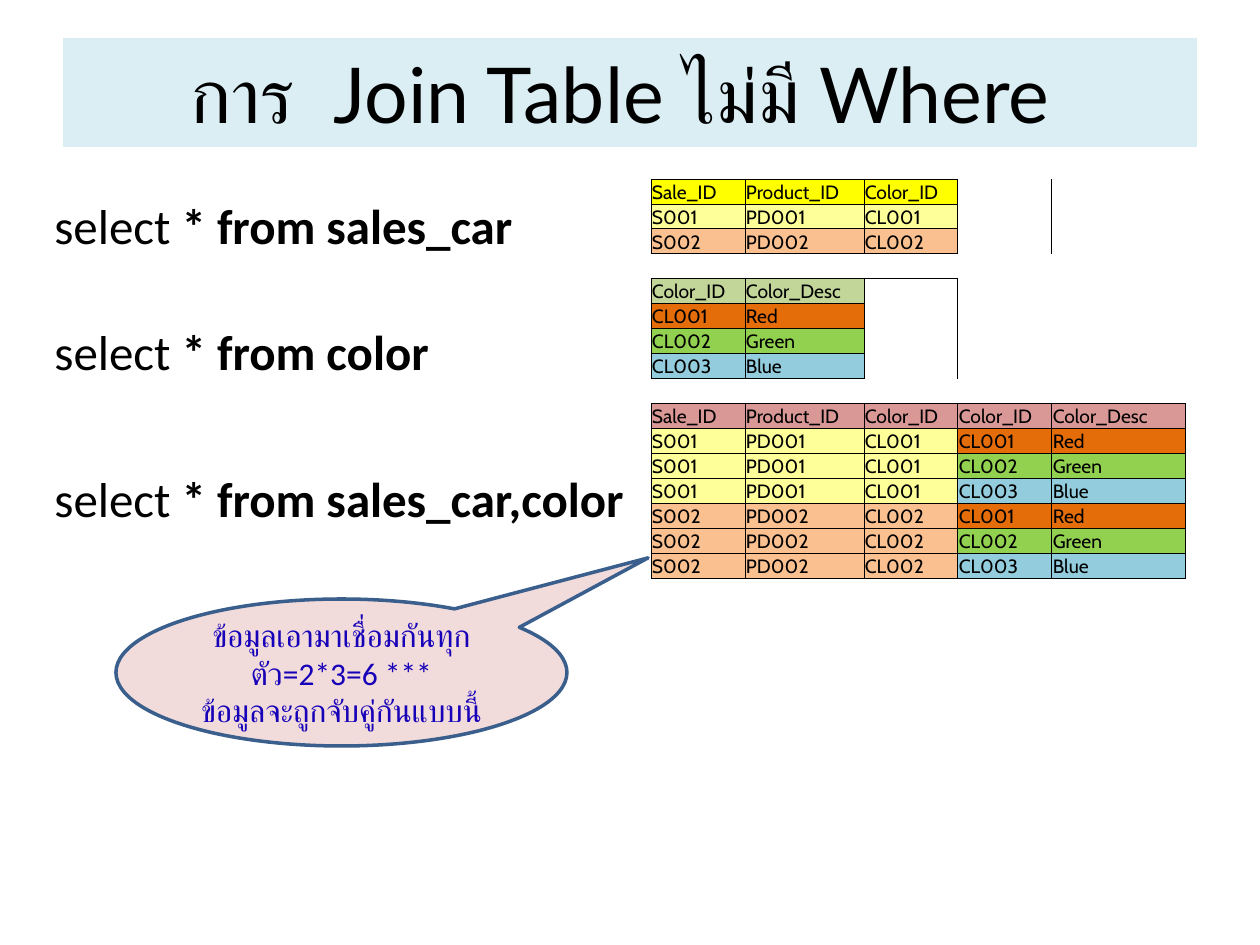
"""Build a slide showing that joining two tables without WHERE pairs every row."""
import itertools
from dataclasses import dataclass
from typing import Optional

import lxml.etree
import pptx
import pptx.dml.color
import pptx.enum.shapes
import pptx.enum.text
import pptx.oxml.ns
import pptx.util

EMU_PER_PX = 914400 / 126
ALIGN = pptx.enum.text.PP_ALIGN
ANCHOR = pptx.enum.text.MSO_ANCHOR
NO_GRID_STYLE = "{2D5ABB26-0587-4C30-8999-92F81FD0307C}"


@dataclass(frozen=True)
class Theme:
    title_font: str = "Lato"
    body_font: str = "Calibri"
    table_font: str = "Cabin"
    title_size: int = 44
    query_size: int = 28
    note_size: int = 18
    table_size: int = 11
    text: str = "000000"
    title_fill: str = "DBEEF4"
    note_fill: str = "F2DCDB"
    note_line: str = "3A5F8C"
    note_text: str = "1600B8"
    sales_header: str = "FFFF00"
    color_header: str = "C2D69A"
    join_header: str = "D99795"
    first_sale: str = "FFFF99"
    second_sale: str = "FAC090"
    red: str = "E46D0A"
    green: str = "92D050"
    blue: str = "93CDDD"


THEME = Theme()


@dataclass(frozen=True)
class Box:
    left: int
    top: int
    width: int
    height: int

    def emu(self) -> tuple:
        return tuple(px(value) for value in (self.left, self.top, self.width, self.height))


@dataclass(frozen=True)
class Query:
    clause: str
    box: Box
    wrap: bool = True


@dataclass(frozen=True)
class Entry:
    text: str
    fill: str


QUERIES = (
    Query(" * from sales_car", Box(42, 189, 630, 72)),
    Query(" * from color", Box(42, 315, 462, 131)),
    Query(" * from sales_car,color", Box(42, 462, 601, 72), wrap=False),
)
COLUMN_WIDTHS = (94, 119, 94, 94, 134)
ROW_HEIGHT = 25


def px(value: int) -> int:
    return round(value * EMU_PER_PX)


def rgb(color: str) -> pptx.dml.color.RGBColor:
    return pptx.dml.color.RGBColor.from_string(color)


def add_text(paragraph, text: str, *, font: str, size: int, color: str = THEME.text,
             bold: Optional[bool] = None, align=None) -> None:
    run = paragraph.add_run()
    run.text = text
    run.font.name = font
    run.font.size = pptx.util.Pt(size)
    run.font.bold = bold
    run.font.color.rgb = rgb(color)
    if align is not None:
        paragraph.alignment = align


def entries(fill: str, *texts: str) -> list:
    return [Entry(text, fill) for text in texts]


def table_rows() -> list:
    sales_names = ("Sale_ID", "Product_ID", "Color_ID")
    color_names = ("Color_ID", "Color_Desc")
    sales = [entries(THEME.first_sale, "S001", "PD001", "CL001"),
             entries(THEME.second_sale, "S002", "PD002", "CL002")]
    colors = [entries(THEME.red, "CL001", "Red"),
              entries(THEME.green, "CL002", "Green"),
              entries(THEME.blue, "CL003", "Blue")]
    joined = [sale + color for sale, color in itertools.product(sales, colors)]
    rows = [entries(THEME.sales_header, *sales_names), *sales, [],
            entries(THEME.color_header, *color_names), *colors, [],
            entries(THEME.join_header, *sales_names, *color_names), *joined]
    return [row + [None] * (len(COLUMN_WIDTHS) - len(row)) for row in rows]


def add_border(cell, side: str) -> None:
    line = lxml.etree.SubElement(cell._tc.get_or_add_tcPr(), pptx.oxml.ns.qn(f"a:ln{side}"),
                                 w=str(pptx.util.Pt(0.5)))
    fill = lxml.etree.SubElement(line, pptx.oxml.ns.qn("a:solidFill"))
    lxml.etree.SubElement(fill, pptx.oxml.ns.qn("a:srgbClr"), val=THEME.text)


def format_cell(cell, entry: Optional[Entry], sides: list) -> None:
    cell.margin_left = cell.margin_right = cell.margin_top = px(1)
    cell.margin_bottom = 0
    cell.vertical_anchor = ANCHOR.BOTTOM
    for side in sides:
        add_border(cell, side)
    paragraph = cell.text_frame.paragraphs[0]
    if entry is None:
        cell.fill.background()
        lxml.etree.SubElement(paragraph._p, pptx.oxml.ns.qn("a:endParaRPr"),
                              sz=str(THEME.table_size * 100))
        return
    cell.fill.solid()
    cell.fill.fore_color.rgb = rgb(entry.fill)
    add_text(paragraph, entry.text, font=THEME.table_font, size=THEME.table_size)


def add_result_table(slide, left: int, top: int) -> None:
    rows = table_rows()
    box = Box(left, top, sum(COLUMN_WIDTHS), ROW_HEIGHT * len(rows))
    table = slide.shapes.add_table(len(rows), len(COLUMN_WIDTHS), *box.emu()).table
    table.first_row = table.horz_banding = False
    table._tbl.tblPr.find(pptx.oxml.ns.qn("a:tableStyleId")).text = NO_GRID_STYLE
    for column, width in zip(table.columns, COLUMN_WIDTHS):
        column.width = px(width)
    for row in table.rows:
        row.height = px(ROW_HEIGHT)
    filled = {(r, c) for r, row in enumerate(rows) for c, entry in enumerate(row) if entry}
    for r, row in enumerate(rows):
        for c, entry in enumerate(row):
            neighbours = {"L": (r, c - 1), "R": (r, c + 1), "T": (r - 1, c), "B": (r + 1, c)}
            sides = [side for side, place in neighbours.items() if entry or place in filled]
            format_cell(table.cell(r, c), entry, sides)


def add_title(slide, text: str, box: Box) -> None:
    title = slide.shapes.title
    title.left, title.top, title.width, title.height = box.emu()
    title.fill.solid()
    title.fill.fore_color.rgb = rgb(THEME.title_fill)
    title.text_frame.vertical_anchor = ANCHOR.MIDDLE
    add_text(title.text_frame.paragraphs[0], text, font=THEME.title_font,
             size=THEME.title_size, align=ALIGN.CENTER)


def add_query(slide, query: Query) -> None:
    frame = slide.shapes.add_textbox(*query.box.emu()).text_frame
    frame.word_wrap = query.wrap
    paragraph = frame.paragraphs[0]
    add_text(paragraph, "select", font=THEME.body_font, size=THEME.query_size)
    add_text(paragraph, query.clause, font=THEME.body_font, size=THEME.query_size, bold=True)


def add_callout(slide, lines: tuple, box: Box) -> None:
    shape = slide.shapes.add_shape(pptx.enum.shapes.MSO_SHAPE.OVAL_CALLOUT, *box.emu())
    shape.shadow.inherit = False
    shape.adjustments[0], shape.adjustments[1] = 0.68, -0.78
    shape.fill.solid()
    shape.fill.fore_color.rgb = rgb(THEME.note_fill)
    shape.line.color.rgb = rgb(THEME.note_line)
    shape.line.width = pptx.util.Pt(2)
    frame = shape.text_frame
    frame.word_wrap = True
    frame.vertical_anchor = ANCHOR.MIDDLE
    for index, line in enumerate(lines):
        paragraph = frame.add_paragraph() if index else frame.paragraphs[0]
        add_text(paragraph, line, font=THEME.body_font, size=THEME.note_size,
                 color=THEME.note_text, align=ALIGN.CENTER)


def main() -> None:
    presentation = pptx.Presentation()
    presentation.slide_width, presentation.slide_height = px(1260), px(945)
    slide = presentation.slides.add_slide(presentation.slide_layouts[5])
    add_title(slide, "การ  Join Table ไม่มี Where ", Box(63, 38, 1134, 109))
    add_result_table(slide, 651, 179)
    for query in QUERIES:
        add_query(slide, query)
    add_callout(slide, ("ข้อมูลเอามาเชื่อมกันทุกตัว=2*3=6 ***", "ข้อมูลจะถูกจับคู่กันแบบนี้"),
                Box(116, 599, 451, 147))
    presentation.save("out.pptx")


if __name__ == "__main__":
    main()
